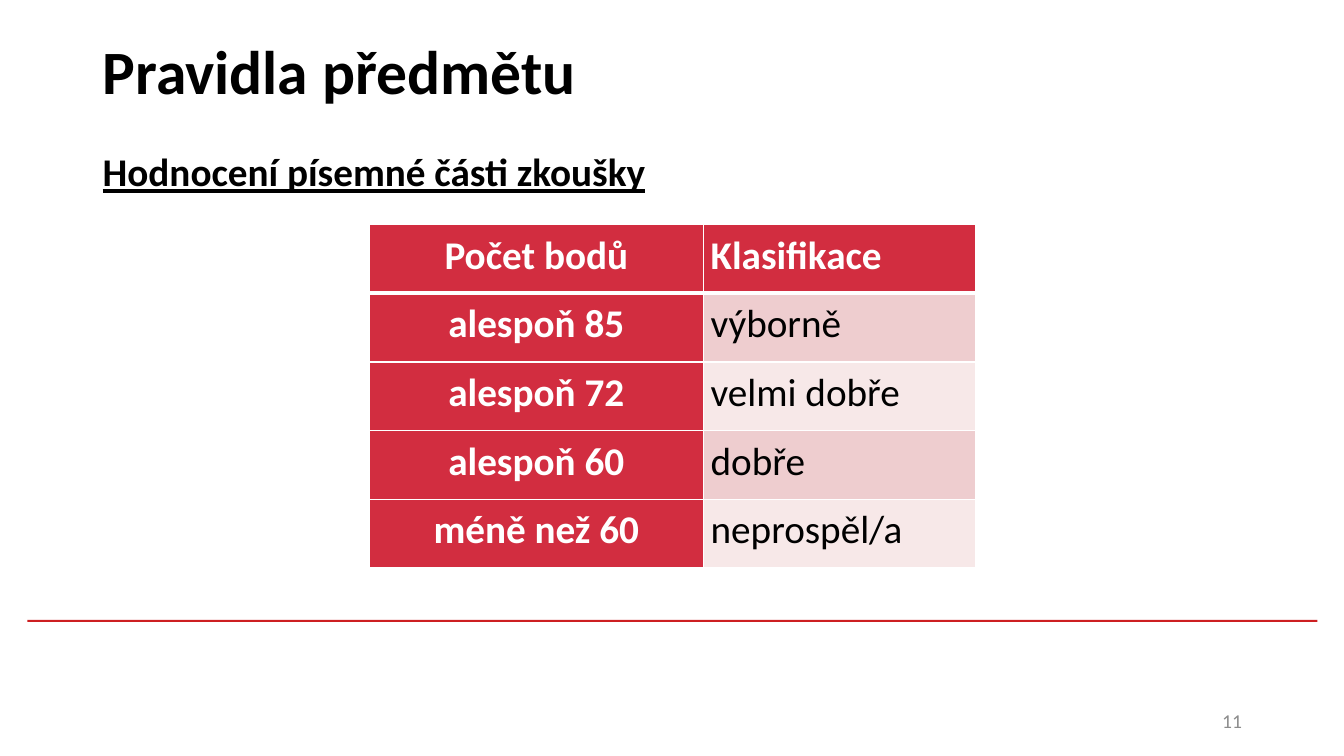
from dataclasses import dataclass

from lxml import etree
from pptx import Presentation
from pptx.dml.color import RGBColor
from pptx.enum.shapes import MSO_SHAPE
from pptx.enum.text import MSO_ANCHOR, PP_ALIGN
from pptx.oxml.ns import qn
from pptx.slide import Slide
from pptx.table import _Cell
from pptx.util import Cm, Pt

LEFT, CENTER, RIGHT, JUSTIFY = PP_ALIGN.LEFT, PP_ALIGN.CENTER, PP_ALIGN.RIGHT, PP_ALIGN.JUSTIFY
TOP, MIDDLE = MSO_ANCHOR.TOP, MSO_ANCHOR.MIDDLE
RECTANGLE = MSO_SHAPE.RECTANGLE

FONT = "Calibri"
BLACK, WHITE, GREY = "000000", "FFFFFF", "8C8C8C"
LINE_RED, TABLE_RED = "CD1F21", "D22D40"
BAND_COLORS = ("EECDCF", "F7E8E8")

GRADES = (
    ("Počet bodů", "Klasifikace"),
    ("alespoň 85", "výborně"),
    ("alespoň 72", "velmi dobře"),
    ("alespoň 60", "dobře"),
    ("méně než 60", "neprospěl/a"),
)
COLUMN_WIDTHS = (8.43, 6.86)
COLUMN_ALIGNMENTS = (CENTER, JUSTIFY)
ROW_HEIGHT = 1.73


@dataclass
class TextItem:
    text: str
    left: float
    top: float
    width: float
    height: float
    size: int
    color: str = BLACK
    bold: bool = False
    underline: bool = False
    alignment: PP_ALIGN = LEFT
    anchor: MSO_ANCHOR = MIDDLE
    line_spacing: float = 1.0


TEXT_ITEMS = (
    TextItem("Pravidla předmětu", 2.34, 0.05, 29.21, 3.68, 44, bold=True, line_spacing=0.9),
    TextItem("Hodnocení písemné části zkoušky", 2.34, 3.73, 29.21, 11.61, 28,
             bold=True, underline=True, anchor=TOP, line_spacing=0.9),
    TextItem("11", 23.93, 17.65, 7.62, 1.02, 14, color=GREY, alignment=RIGHT),
)


def rgb(color: str) -> RGBColor:
    return RGBColor.from_string(color)


def format_font(font, size: int, color: str, bold: bool) -> None:
    font.name = FONT
    font.size = Pt(size)
    font.bold = bold
    font.color.rgb = rgb(color)


def add_text(slide: Slide, item: TextItem) -> None:
    box = slide.shapes.add_textbox(Cm(item.left), Cm(item.top), Cm(item.width), Cm(item.height))
    frame = box.text_frame
    frame.word_wrap = True
    frame.vertical_anchor = item.anchor
    frame.text = item.text
    paragraph = frame.paragraphs[0]
    paragraph.alignment = item.alignment
    paragraph.line_spacing = item.line_spacing
    font = paragraph.runs[0].font
    format_font(font, item.size, item.color, item.bold)
    font.underline = item.underline


def add_divider(slide: Slide) -> None:
    divider = slide.shapes.add_shape(RECTANGLE, Cm(0.69), Cm(15.62), Cm(32.51), Cm(0.05))
    divider.shadow.inherit = False
    divider.fill.solid()
    divider.fill.fore_color.rgb = rgb(LINE_RED)
    divider.line.fill.background()


def set_borders(cell: _Cell, top: float, bottom: float) -> None:
    """Draw white cell borders; the side borders are 1 pt wide."""
    properties = cell._tc.get_or_add_tcPr()
    for tag, width in (("a:lnL", 1), ("a:lnR", 1), ("a:lnT", top), ("a:lnB", bottom)):
        line = etree.SubElement(properties, qn(tag), w=str(Pt(width)))
        fill = etree.SubElement(line, qn("a:solidFill"))
        etree.SubElement(fill, qn("a:srgbClr"), val=WHITE)


def fill_cell(cell: _Cell, text: str, row: int, column: int) -> None:
    is_heading = row == 0 or column == 0
    set_borders(cell, top=3 if row == 1 else 1, bottom=3 if row == 0 else 1)
    cell.fill.solid()
    cell.fill.fore_color.rgb = rgb(TABLE_RED if is_heading else BAND_COLORS[(row - 1) % 2])
    cell.margin_left = cell.margin_right = Cm(0.18)
    cell.margin_top = cell.margin_bottom = 0
    cell.text_frame.text = text
    paragraph = cell.text_frame.paragraphs[0]
    paragraph.alignment = COLUMN_ALIGNMENTS[column]
    paragraph.line_spacing = 1.15
    paragraph.space_after = Pt(6)
    format_font(paragraph.runs[0].font, 28, WHITE if is_heading else BLACK, is_heading)


def add_grade_table(slide: Slide) -> None:
    table = slide.shapes.add_table(
        len(GRADES), len(COLUMN_WIDTHS), Cm(9.3), Cm(5.66),
        Cm(sum(COLUMN_WIDTHS)), Cm(ROW_HEIGHT * len(GRADES)),
    ).table
    table.first_col = True
    for column, width in zip(table.columns, COLUMN_WIDTHS):
        column.width = Cm(width)
    for row, texts in enumerate(GRADES):
        table.rows[row].height = Cm(ROW_HEIGHT)
        for column, text in enumerate(texts):
            fill_cell(table.cell(row, column), text, row, column)


def main() -> None:
    presentation = Presentation()
    presentation.slide_width = Cm(33.87)
    presentation.slide_height = Cm(19.05)
    slide = presentation.slides.add_slide(presentation.slide_layouts[6])
    add_divider(slide)
    for item in TEXT_ITEMS:
        add_text(slide, item)
    add_grade_table(slide)
    presentation.save("out.pptx")


if __name__ == "__main__":
    main()
